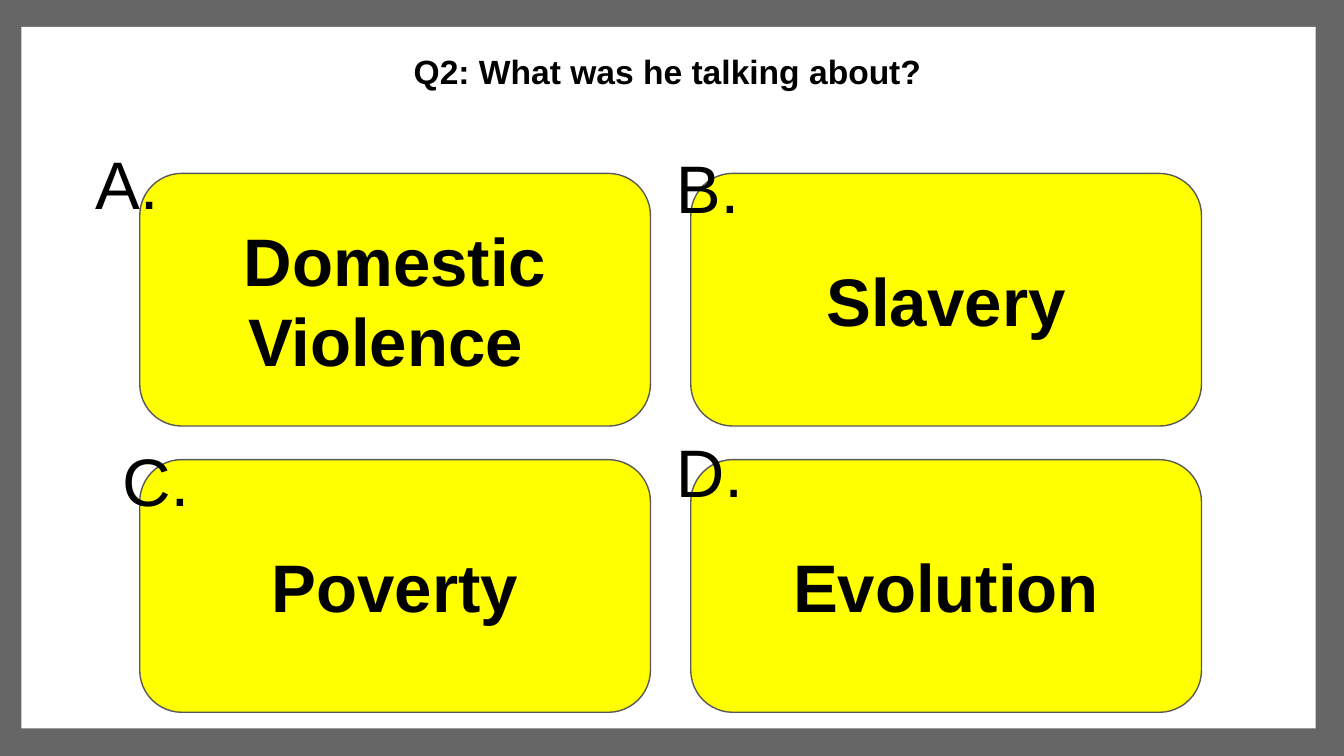
from pptx import Presentation
from pptx.dml.color import RGBColor
from pptx.enum.shapes import MSO_SHAPE
from pptx.enum.text import MSO_ANCHOR, PP_ALIGN
from pptx.util import Inches, Pt

RECTANGLE = MSO_SHAPE.RECTANGLE
ROUNDED = MSO_SHAPE.ROUNDED_RECTANGLE
MIDDLE, TOP = MSO_ANCHOR.MIDDLE, MSO_ANCHOR.TOP
CENTER, LEFT = PP_ALIGN.CENTER, PP_ALIGN.LEFT

COLORS = {
    "frame": "666666",
    "page": "FFFFFF",
    "answer": "FFFF00",
    "outline": "595959",
    "text": "000000",
}
FONT = "Arial"

# 16:9 slide, in inches
SLIDE_WIDTH = 10
SLIDE_HEIGHT = SLIDE_WIDTH * 9 / 16

# Answer grid: two columns by two rows, in inches
GRID_LEFT, GRID_TOP = 1.04, 1.29
CARD_WIDTH, CARD_HEIGHT = 3.8, 1.88
COLUMN_STEP, ROW_STEP = 4.1, 2.13
COLUMNS = 2

# Answer text, its letter, and the letter's box relative to the card's corner
ANSWERS = [
    ("Domestic Violence ", "A.", (-0.43, -0.33, 0.96, 0.79)),
    ("Slavery", "B.", (-0.21, -0.3, 0.72, 0.72)),
    ("Poverty", "C.", (-0.23, -0.25, 0.96, 0.72)),
    ("Evolution", "D.", (-0.21, -0.32, 1.09, 0.72)),
]


def color(name):
    return RGBColor.from_string(COLORS[name])


def write(frame, text, size, bold=False, align=LEFT, anchor=TOP):
    frame.word_wrap = True
    frame.margin_left = frame.margin_right = Inches(0.1)
    frame.margin_top = frame.margin_bottom = Inches(0.1)
    frame.vertical_anchor = anchor
    frame.text = text
    paragraph = frame.paragraphs[0]
    paragraph.alignment = align
    font = paragraph.runs[0].font
    font.name, font.size, font.bold = FONT, Pt(size), bold
    font.color.rgb = color("text")


def add_panel(slide, kind, box, fill, outline=None):
    panel = slide.shapes.add_shape(kind, *map(Inches, box))
    panel.shadow.inherit = False
    panel.fill.solid()
    panel.fill.fore_color.rgb = color(fill)
    if outline:
        panel.line.color.rgb = color(outline)
        panel.line.width = Pt(0.75)
    else:
        panel.line.fill.background()
    return panel


def add_label(slide, box, text, size, bold=False):
    label = slide.shapes.add_textbox(*map(Inches, box))
    write(label.text_frame, text, size, bold)


def card_corner(index):
    row, column = divmod(index, COLUMNS)
    return GRID_LEFT + column * COLUMN_STEP, GRID_TOP + row * ROW_STEP


def add_answer(slide, index, answer):
    box = (*card_corner(index), CARD_WIDTH, CARD_HEIGHT)
    card = add_panel(slide, ROUNDED, box, "answer", "outline")
    write(card.text_frame, answer, 36, True, CENTER, MIDDLE)


def add_letter(slide, index, letter, offset_box):
    left, top = card_corner(index)
    dx, dy, width, height = offset_box
    add_label(slide, (left + dx, top + dy, width, height), letter, 36)


def main():
    presentation = Presentation()
    presentation.slide_width = Inches(SLIDE_WIDTH)
    presentation.slide_height = Inches(SLIDE_HEIGHT)
    slide = presentation.slides.add_slide(presentation.slide_layouts[6])

    # Grey frame around the white page
    add_panel(slide, RECTANGLE, (-0.02, 0, 10.02, SLIDE_HEIGHT), "frame")
    add_panel(slide, RECTANGLE, (0.16, 0.2, 9.63, 5.22), "page")

    # Question
    add_label(slide, (2.98, 0.28, 4.03, 0.53),
              "Q2: What was he talking about?", 18, bold=True)

    # Answer cards, then the letters on top of them
    for index, (answer, _, _) in enumerate(ANSWERS):
        add_answer(slide, index, answer)
    for index, (_, letter, offset_box) in enumerate(ANSWERS):
        add_letter(slide, index, letter, offset_box)

    presentation.save("out.pptx")


if __name__ == "__main__":
    main()
